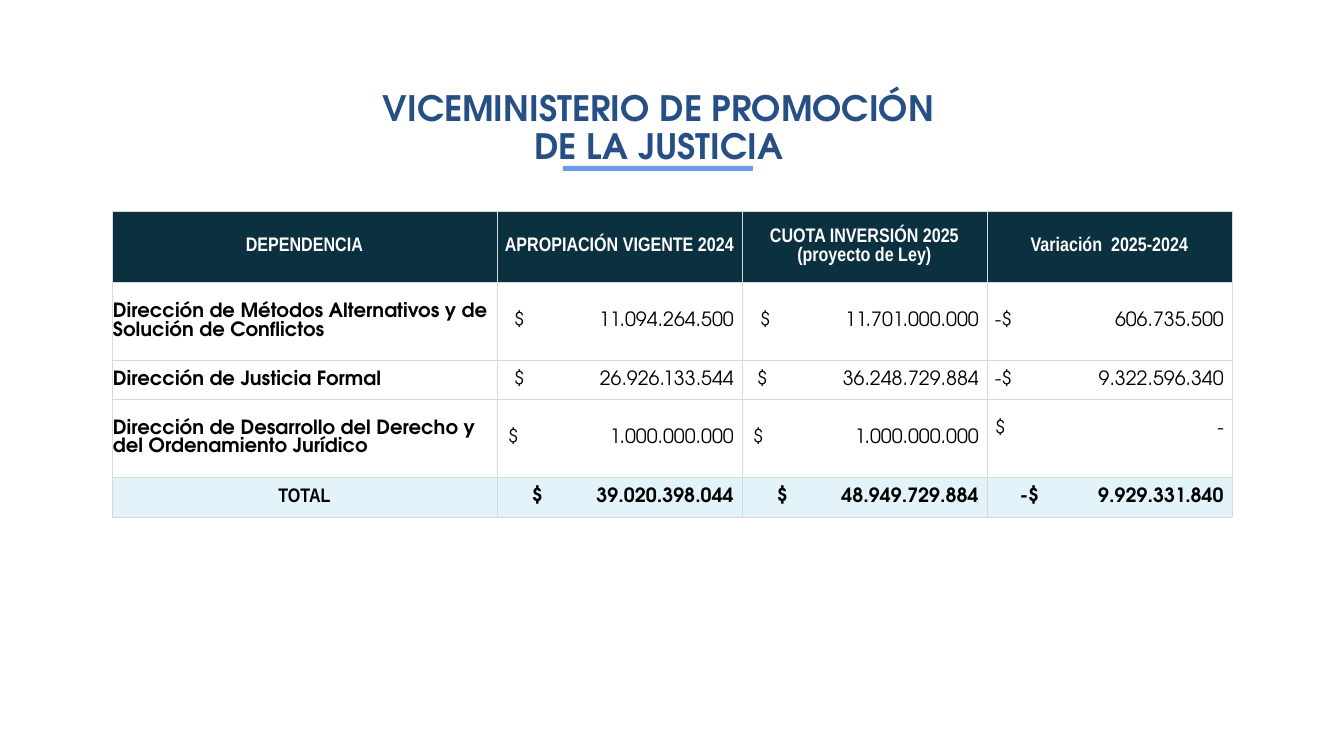
from dataclasses import dataclass
from typing import Optional

from lxml.etree import SubElement
from pptx import Presentation
from pptx.dml.color import RGBColor
from pptx.enum.shapes import MSO_SHAPE as Preset
from pptx.enum.text import MSO_ANCHOR as Anchor, PP_ALIGN as Align
from pptx.oxml.ns import qn
from pptx.util import Emu, Pt

PX_PER_INCH = 100.8
SANS = "TeX Gyre Adventor"
NARROW = "Arial Narrow"
WHITE = RGBColor(0xFF, 0xFF, 0xFF)
BLACK = RGBColor(0, 0, 0)
TITLE_BLUE = RGBColor(0x26, 0x50, 0x85)
BAR_BLUE = RGBColor(0x6B, 0x9C, 0xE9)
HEADER_NAVY = RGBColor(0x0B, 0x30, 0x40)
TOTAL_BLUE = RGBColor(0xE2, 0xF3, 0xFA)
BORDER_GRAY = RGBColor(0xD9, 0xD9, 0xD9)
COLUMN_WIDTHS = (385, 245, 245, 245)
AMOUNT_TAB = 236


@dataclass(frozen=True)
class Style:
    font: str
    size: int
    color: RGBColor
    bold: bool = True


@dataclass(frozen=True)
class Amount:
    sign: str
    sign_tab: int
    value: str
    raised: int = 0


@dataclass(frozen=True)
class BudgetRow:
    height: int
    label: str
    amounts: tuple[Amount, ...]
    label_style: Style
    amount_style: Style
    label_align: Align = Align.LEFT
    fill: Optional[RGBColor] = None


TITLE = Style(SANS, 25, TITLE_BLUE)
HEADER = Style(NARROW, 14, WHITE)
LABEL = Style(SANS, 14, BLACK)
AMOUNT = Style(SANS, 14, BLACK, bold=False)
TOTAL_LABEL = Style(NARROW, 14, BLACK)

HEADER_HEIGHT = 71
HEADERS = (
    ("DEPENDENCIA",),
    ("APROPIACIÓN VIGENTE 2024",),
    ("CUOTA INVERSIÓN 2025", "(proyecto de Ley)"),
    ("Variación  2025-2024",),
)
ROWS = (
    BudgetRow(78, "Dirección de Métodos Alternativos y de Solución de Conflictos",
              (Amount("$", 16, "11.094.264.500"), Amount("$", 17, "11.701.000.000"),
               Amount("-$", 7, "606.735.500")), LABEL, AMOUNT),
    BudgetRow(39, "Dirección de Justicia Formal",
              (Amount("$", 16, "26.926.133.544"), Amount("$", 14, "36.248.729.884"),
               Amount("-$", 7, "9.322.596.340")), LABEL, AMOUNT),
    BudgetRow(78, "Dirección de Desarrollo del Derecho y del Ordenamiento Jurídico",
              (Amount("$", 10, "1.000.000.000"), Amount("$", 10, "1.000.000.000"),
               Amount("$", 7, "-", raised=18)), LABEL, AMOUNT),
    BudgetRow(40, "TOTAL",
              (Amount("$", 34, "39.020.398.044"), Amount("$", 34, "48.949.729.884"),
               Amount("-$", 32, "9.929.331.840")), TOTAL_LABEL, LABEL,
              Align.CENTER, TOTAL_BLUE),
)


def px(length: int) -> Emu:
    return Emu(round(length * 914400 / PX_PER_INCH))


def add_text(paragraph, text: str, style: Style, align: Align) -> None:
    paragraph.alignment = align
    run = paragraph.add_run()
    run.text = text
    run.font.name = style.font
    run.font.size = Pt(style.size)
    run.font.bold = style.bold
    run.font.color.rgb = style.color


def add_tabs(paragraph, sign_tab: int) -> None:
    tabs = SubElement(paragraph._p.get_or_add_pPr(), qn("a:tabLst"))
    for position, align in ((sign_tab, "l"), (AMOUNT_TAB, "r")):
        SubElement(tabs, qn("a:tab"), pos=str(px(position)), algn=align)


def format_cell(cell, fill: Optional[RGBColor], raised: int = 0) -> None:
    cell.margin_left = cell.margin_top = cell.margin_right = px(1)
    cell.margin_bottom = px(raised)
    cell.vertical_anchor = Anchor.MIDDLE
    properties = cell._tc.get_or_add_tcPr()
    for side in ("lnL", "lnR", "lnT", "lnB"):
        line = SubElement(properties, qn(f"a:{side}"), w=str(Pt(0.5)))
        solid = SubElement(line, qn("a:solidFill"))
        SubElement(solid, qn("a:srgbClr"), val=str(BORDER_GRAY))
    if fill is None:
        cell.fill.background()
    else:
        cell.fill.solid()
        cell.fill.fore_color.rgb = fill


def fill_cell(cell, lines: tuple[str, ...], style: Style, align: Align) -> None:
    frame = cell.text_frame
    for index, line in enumerate(lines):
        paragraph = frame.add_paragraph() if index else frame.paragraphs[0]
        paragraph.line_spacing = Pt(13)
        add_text(paragraph, line, style, align)


def add_title(slide) -> None:
    box = slide.shapes.add_textbox(px(351), px(84), px(615), px(88))
    frame = box.text_frame
    frame.word_wrap = True
    frame.vertical_anchor = Anchor.BOTTOM
    paragraph = frame.paragraphs[0]
    paragraph.line_spacing = 0.9
    add_text(paragraph, "VICEMINISTERIO DE PROMOCIÓN DE LA JUSTICIA", TITLE, Align.CENTER)

    bar = slide.shapes.add_shape(Preset.RECTANGLE, px(563), px(166), px(190), px(5))
    bar.shadow.inherit = False
    bar.fill.solid()
    bar.fill.fore_color.rgb = BAR_BLUE
    bar.line.fill.background()


def add_budget_table(slide) -> None:
    heights = (HEADER_HEIGHT, *(row.height for row in ROWS))
    table = slide.shapes.add_table(
        len(heights), len(COLUMN_WIDTHS), px(112), px(211),
        px(sum(COLUMN_WIDTHS)), px(sum(heights))).table
    for column, width in zip(table.columns, COLUMN_WIDTHS):
        column.width = px(width)
    for table_row, height in zip(table.rows, heights):
        table_row.height = px(height)

    for column, lines in enumerate(HEADERS):
        cell = table.cell(0, column)
        format_cell(cell, HEADER_NAVY)
        fill_cell(cell, lines, HEADER, Align.CENTER)

    for index, row in enumerate(ROWS, start=1):
        cell = table.cell(index, 0)
        format_cell(cell, row.fill)
        fill_cell(cell, (row.label,), row.label_style, row.label_align)
        for column, amount in enumerate(row.amounts, start=1):
            cell = table.cell(index, column)
            format_cell(cell, row.fill, amount.raised)
            add_tabs(cell.text_frame.paragraphs[0], amount.sign_tab)
            text = f"\t{amount.sign}\t{amount.value}"
            fill_cell(cell, (text,), row.amount_style, Align.LEFT)


def main() -> None:
    presentation = Presentation()
    presentation.slide_width = px(1344)
    presentation.slide_height = px(756)
    slide = presentation.slides.add_slide(presentation.slide_layouts[6])
    add_title(slide)
    add_budget_table(slide)
    presentation.save("out.pptx")


if __name__ == "__main__":
    main()
